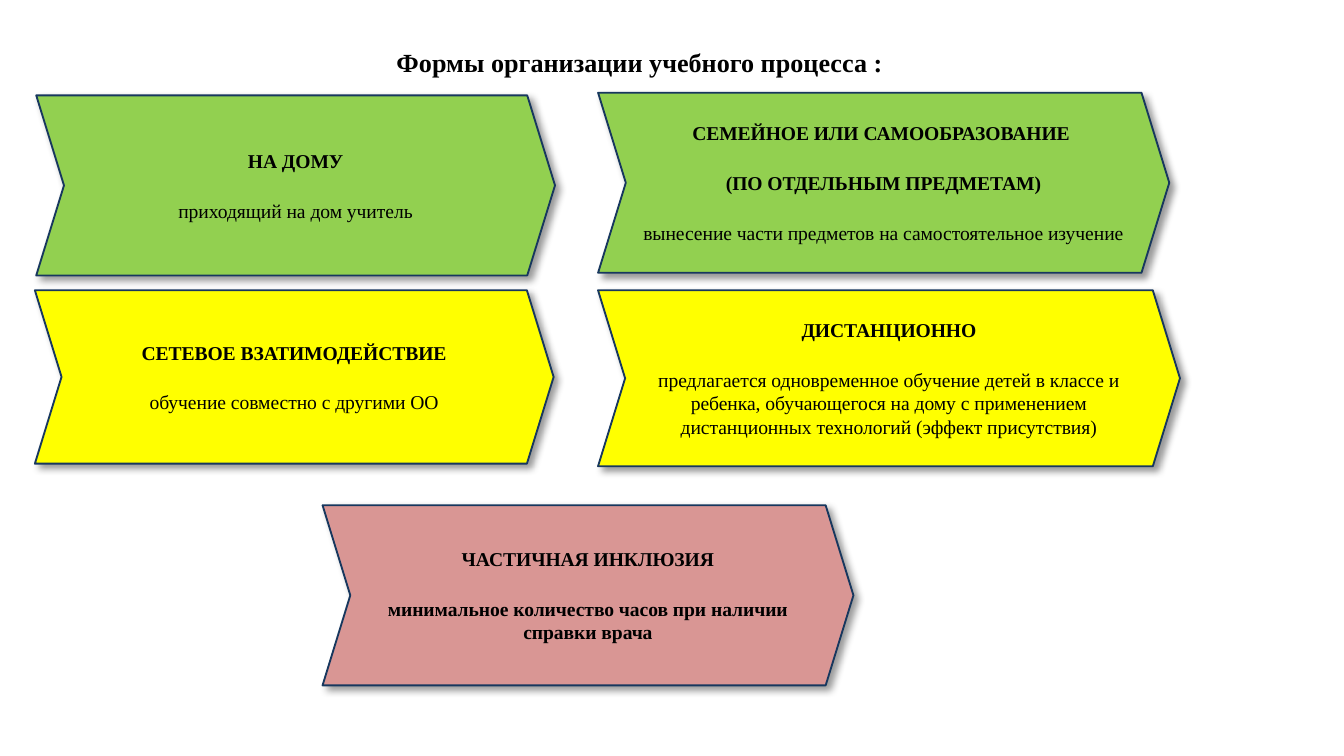
from lxml import etree
from pptx import Presentation
from pptx.dml.color import RGBColor
from pptx.enum.shapes import MSO_SHAPE
from pptx.enum.text import MSO_ANCHOR, MSO_AUTO_SIZE, PP_ALIGN
from pptx.oxml.ns import qn
from pptx.util import Inches, Pt

CHEVRON = MSO_SHAPE.CHEVRON
MIDDLE = MSO_ANCHOR.MIDDLE
CENTER, JUSTIFY = PP_ALIGN.CENTER, PP_ALIGN.JUSTIFY
TITLE_ONLY = 5
WIDTH = 10
HEIGHT = WIDTH * 9 / 16
FONT = "Times New Roman"
GREEN, YELLOW, PINK, NAVY, BLACK = "92D050", "FFFF00", "D99694", "17375E", "000000"

LEFT, MID, RIGHT = 0.26, 2.4, 4.45
TOP, CENTRE, BOTTOM = 0.7, 2.16, 3.76
ROW_H = 1.34

# box (left, top, width, height), fill, heading lines, description, bold description
FORMS = [
    ((RIGHT, TOP - 0.01, 4.25, ROW_H), GREEN,
     ["СЕМЕЙНОЕ ИЛИ САМООБРАЗОВАНИЕ ", "(ПО ОТДЕЛЬНЫМ ПРЕДМЕТАМ)"],
     "вынесение части предметов на самостоятельное изучение", False),
    ((LEFT + 0.01, TOP + 0.01, 3.86, ROW_H), GREEN,
     ["НА ДОМУ"], "приходящий на дом учитель", False),
    ((RIGHT, CENTRE, 4.33, 1.31), YELLOW,
     ["ДИСТАНЦИОННО"],
     "предлагается одновременное обучение детей в классе и ребенка, "
     "обучающегося на дому с применением дистанционных технологий "
     "(эффект присутствия)", False),
    ((LEFT, CENTRE, 3.86, 1.29), YELLOW,
     ["СЕТЕВОЕ ВЗАТИМОДЕЙСТВИЕ"], "обучение совместно с другими ОО", False),
    ((MID, BOTTOM, 3.95, ROW_H), PINK,
     ["ЧАСТИЧНАЯ ИНКЛЮЗИЯ"],
     "минимальное количество часов при наличии справки врача", True),
]


def color(value):
    return RGBColor.from_string(value)


def write(p, text, size=10.5, bold=False, align=CENTER, before=0, after=0):
    p.alignment = align
    p.space_before, p.space_after = Pt(before), Pt(after)
    r = p.add_run()
    r.text = text
    r.font.name, r.font.size, r.font.bold = FONT, Pt(size), bold
    r.font.color.rgb = color(BLACK)


def add_shadow(sp, blur=4, distance=3, angle=45, opacity=40):
    """Give the shape an outer shadow; lengths in points, opacity in percent."""
    sp.shadow.inherit = False
    effects = sp._element.spPr.find(qn("a:effectLst"))
    outer = etree.SubElement(effects, qn("a:outerShdw"), blurRad=str(Pt(blur)),
                             dist=str(Pt(distance)), dir=str(angle * 60000),
                             algn="tl", rotWithShape="0")
    clr = etree.SubElement(outer, qn("a:srgbClr"), val=BLACK)
    etree.SubElement(clr, qn("a:alpha"), val=str(opacity * 1000))


def add_title(slide, box, text):
    sp = slide.shapes.title
    sp.left, sp.top, sp.width, sp.height = map(Inches, box)
    tf = sp.text_frame
    tf.word_wrap, tf.auto_size = False, MSO_AUTO_SIZE.SHAPE_TO_FIT_TEXT
    tf.vertical_anchor = MIDDLE
    p = tf.paragraphs[0]
    p._p.get_or_add_pPr().set("indent", str(Inches(0.49)))
    write(p, text, size=14, bold=True, align=JUSTIFY)


def add_form(slide, box, fill, headings, description, bold):
    """Draw one chevron with bold heading lines above a description."""
    sp = slide.shapes.add_shape(CHEVRON, *map(Inches, box))
    sp.adjustments[0] = 0.154
    sp.fill.solid()
    sp.fill.fore_color.rgb = color(fill)
    sp.line.color.rgb = color(NAVY)
    sp.line.width = Pt(1)
    add_shadow(sp)
    tf = sp.text_frame
    tf.word_wrap, tf.vertical_anchor = True, MIDDLE
    tf.margin_left = tf.margin_right = 0
    lines = [(text, True) for text in headings] + [(description, bold)]
    for i, (text, is_bold) in enumerate(lines):
        p = tf.add_paragraph() if i else tf.paragraphs[0]
        write(p, text, bold=is_bold, before=2 if i else 0, after=12)


def main():
    prs = Presentation()
    prs.slide_width, prs.slide_height = Inches(WIDTH), Inches(HEIGHT)
    slide = prs.slides.add_slide(prs.slide_layouts[TITLE_ONLY])
    add_title(slide, (2.36, 0.29, 4.35, 0.34),
              "Формы организации учебного процесса :")
    for form in FORMS:
        add_form(slide, *form)
    prs.save("out.pptx")


if __name__ == "__main__":
    main()
